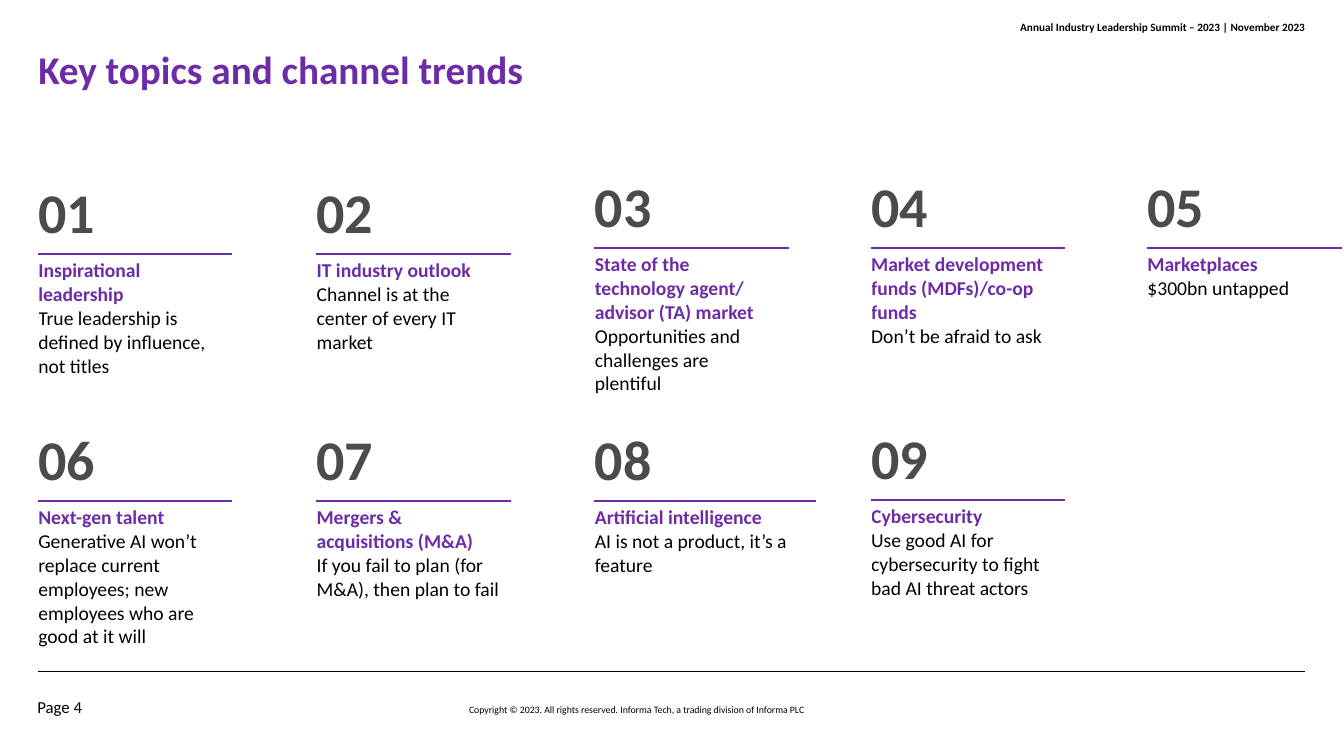
from dataclasses import dataclass

from lxml import etree
from pptx import Presentation
from pptx.dml.color import RGBColor
from pptx.enum.shapes import MSO_CONNECTOR
from pptx.enum.text import MSO_ANCHOR, PP_ALIGN
from pptx.oxml.ns import qn
from pptx.slide import Slide
from pptx.util import Pt

PX = 9144  # 100 px to the inch
FONT = "Calibri"
PURPLE = RGBColor(0x6D, 0x2C, 0xA7)
GREY = RGBColor(0x4B, 0x4B, 0x4B)
BLACK = RGBColor(0, 0, 0)
WHITE = RGBColor(0xFF, 0xFF, 0xFF)
TOP, MIDDLE, BOTTOM = MSO_ANCHOR.TOP, MSO_ANCHOR.MIDDLE, MSO_ANCHOR.BOTTOM
LEFT, CENTER, RIGHT = PP_ALIGN.LEFT, PP_ALIGN.CENTER, PP_ALIGN.RIGHT
STRAIGHT = MSO_CONNECTOR.STRAIGHT

COLUMN_LEFTS = (38, 314, 590, 864, 1138)
ROW_HEIGHT = 102
CELL_MARGINS = {"margin_left": 0, "margin_right": 10 * PX,
                "margin_top": 5 * PX, "margin_bottom": 5 * PX}
NO_MARGINS = dict.fromkeys(CELL_MARGINS, 0)
PLAIN_TABLE = {"first_row": False, "horz_banding": False}


@dataclass(frozen=True)
class Topic:
    heading: str
    summary: str
    top: int
    width: int = 192


@dataclass(frozen=True)
class Label:
    text: str
    box: tuple[int, int, int, int]
    size: int
    anchor: MSO_ANCHOR
    align: PP_ALIGN = LEFT
    color: RGBColor = BLACK
    bold: bool = False
    spacing: float = 0.85
    wrap: bool = True


TOPICS = (
    Topic("Inspirational leadership",
          "True leadership is defined by influence, not titles", 150),
    Topic("IT industry outlook", "Channel is at the center of every IT market", 150),
    Topic("State of the technology agent/ advisor (TA) market",
          "Opportunities and challenges are plentiful", 144),
    Topic("Market development funds (MDFs)/co-op funds", "Don’t be afraid to ask", 144),
    Topic("Marketplaces", "$300bn untapped", 144),
    Topic("Next-gen talent",
          "Generative AI won’t replace current employees; "
          "new employees who are good at it will", 395),
    Topic("Mergers & acquisitions (M&A)",
          "If you fail to plan (for M&A), then plan to fail", 395),
    Topic("Artificial intelligence", "AI is not a product, it’s a feature", 395, 219),
    Topic("Cybersecurity",
          "Use good AI for cybersecurity to fight bad AI threat actors", 394),
)

LABELS = (
    Label("Annual Industry Leadership Summit – 2023 | November 2023",
          (683, 0, 612, 54), 8, MIDDLE, RIGHT, bold=True, spacing=1.0, wrap=False),
    Label("Key topics and channel trends", (38, 52, 797, 75), 28, TOP,
          color=PURPLE, bold=True),
    Label("Copyright © 2023. All rights reserved. Informa Tech, "
          "a trading division of Informa PLC", (385, 684, 493, 26), 7, BOTTOM, CENTER),
    Label("Page 4", (37, 671, 99, 40), 12, BOTTOM),
)


def apply(target: object, values: dict) -> None:
    for name, value in values.items():
        setattr(target, name, value)


def write(paragraph, text: str, size: int, color: RGBColor, bold: bool) -> None:
    run = paragraph.add_run()
    run.text = text
    apply(run.font, {"name": FONT, "size": Pt(size), "bold": bold})
    run.font.color.rgb = color


def add_label(slide: Slide, label: Label) -> None:
    box = slide.shapes.add_textbox(*(length * PX for length in label.box))
    frame = box.text_frame
    apply(frame, NO_MARGINS | {"word_wrap": label.wrap, "vertical_anchor": label.anchor})
    paragraph = frame.paragraphs[0]
    apply(paragraph, {"alignment": label.align, "line_spacing": label.spacing})
    write(paragraph, label.text, label.size, label.color, label.bold)


def format_cell(cell, anchor: MSO_ANCHOR, purple_side: str) -> None:
    """Draw white borders with one purple side, and clear the fill."""
    apply(cell, CELL_MARGINS | {"vertical_anchor": anchor})
    properties = cell._tc.get_or_add_tcPr()
    for side in ("lnL", "lnR", "lnT", "lnB"):
        border = etree.SubElement(properties, qn(f"a:{side}"), w=str(Pt(1)))
        fill = etree.SubElement(border, qn("a:solidFill"))
        color = PURPLE if side == purple_side else WHITE
        etree.SubElement(fill, qn("a:srgbClr"), val=str(color))
    cell.fill.background()


def add_topic(slide: Slide, index: int, topic: Topic) -> None:
    left = COLUMN_LEFTS[index % len(COLUMN_LEFTS)]
    table = slide.shapes.add_table(2, 1, left * PX, topic.top * PX,
                                   topic.width * PX, 2 * ROW_HEIGHT * PX).table
    apply(table, PLAIN_TABLE)
    number, body = table.cell(0, 0), table.cell(1, 0)
    format_cell(number, BOTTOM, "lnB")
    format_cell(body, TOP, "lnT")
    write(number.text_frame.paragraphs[0], f"{index + 1:02}", 40, GREY, True)
    write(body.text_frame.paragraphs[0], topic.heading, 14, PURPLE, True)
    write(body.text_frame.add_paragraph(), topic.summary, 14, BLACK, False)


def add_footer_rule(slide: Slide) -> None:
    rule = slide.shapes.add_connector(STRAIGHT, 38 * PX, 666 * PX, 1294 * PX, 666 * PX)
    rule.line.color.rgb = BLACK
    rule.line.width = Pt(1)
    etree.SubElement(rule._element.spPr, qn("a:effectLst"))


def main() -> None:
    presentation = Presentation()
    apply(presentation, {"slide_width": 1333 * PX, "slide_height": 750 * PX})
    slide = presentation.slides.add_slide(presentation.slide_layouts[6])
    add_footer_rule(slide)
    for label in LABELS:
        add_label(slide, label)
    for index, topic in enumerate(TOPICS):
        add_topic(slide, index, topic)
    presentation.save("out.pptx")


if __name__ == "__main__":
    main()
